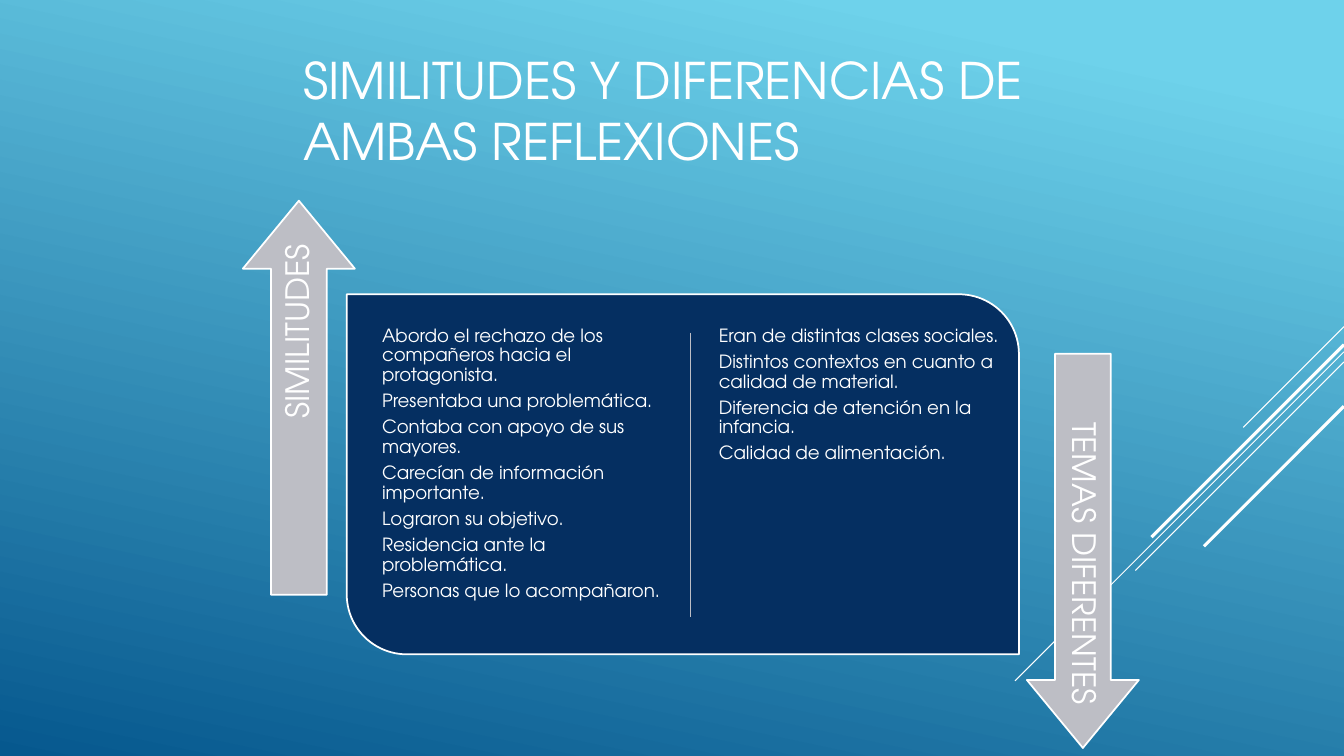
from dataclasses import dataclass

from lxml import etree
from pptx import Presentation
from pptx.dml.color import RGBColor
from pptx.enum.shapes import MSO_CONNECTOR, MSO_SHAPE
from pptx.enum.text import MSO_ANCHOR, PP_ALIGN
from pptx.oxml.ns import qn
from pptx.util import Pt

STRAIGHT = MSO_CONNECTOR.STRAIGHT
PANEL_SHAPE = MSO_SHAPE.ROUND_2_DIAG_RECTANGLE
ARROW_SHAPE = MSO_SHAPE.RIGHT_ARROW
TOP, MIDDLE, BOTTOM = MSO_ANCHOR.TOP, MSO_ANCHOR.MIDDLE, MSO_ANCHOR.BOTTOM
LEFT, RIGHT = PP_ALIGN.LEFT, PP_ALIGN.RIGHT


@dataclass(frozen=True)
class Theme:
    font: str = "TeX Gyre Adventor"
    white: RGBColor = RGBColor(0xFF, 0xFF, 0xFF)
    navy: RGBColor = RGBColor(0x05, 0x2F, 0x61)
    gray: RGBColor = RGBColor(0xBD, 0xBE, 0xC5)
    sky: RGBColor = RGBColor(0x6E, 0xD2, 0xEB)
    deep_blue: RGBColor = RGBColor(0x06, 0x58, 0x8E)
    title_size: float = 36
    label_size: float = 23
    body_size: float = 13
    outline: float = 1.25


THEME = Theme()
PAGE_WIDTH, PAGE_HEIGHT = 960, 540

TITLE = "SIMILITUDES Y DIFERENCIAS DE AMBAS REFLEXIONES"
SIMILARITIES = [
    "Abordo el rechazo de los compañeros hacia el protagonista.",
    "Presentaba una problemática.",
    "Contaba con apoyo de sus mayores.",
    "Carecían de información importante.",
    "Lograron su objetivo.",
    "Residencia ante la problemática.",
    "Personas que lo acompañaron.",
]
DIFFERENCES = [
    "Eran de distintas clases sociales.",
    "Distintos contextos en cuanto a calidad de material.",
    "Diferencia de atención en la infancia.",
    "Calidad de alimentación.",
]
# Start height on the right edge, horizontal run, line width
DIAGONALS = [
    (233.3, 72, 0.75),
    (251.3, 235, 0.75),
    (258.5, 149, 0.75),
    (246.2, 137.5, 2.25),
    (290.2, 100, 2.25),
]


def apply_format(target, values):
    for name, value in values.items():
        setattr(target, name, value)


def centered_box(center_x, center_y, width, height):
    return center_x - width / 2, center_y - height / 2, width, height


def add_line(page, start, end, color, width):
    line = page.shapes.add_connector(STRAIGHT, *map(Pt, (*start, *end)))
    line.line.color.rgb = color
    line.line.width = Pt(width)
    etree.SubElement(line._element.spPr, qn("a:effectLst"))


def add_outlined_shape(page, kind, box, fill, adjustments):
    shape = page.shapes.add_shape(kind, *map(Pt, box))
    shape.shadow.inherit = False
    shape.fill.solid()
    shape.fill.fore_color.rgb = fill
    shape.line.color.rgb = THEME.white
    shape.line.width = Pt(THEME.outline)
    for index, value in enumerate(adjustments):
        shape.adjustments[index] = value
    return shape


def add_text(page, box, texts, size, insets, anchor=TOP, align=LEFT, spacing=0.9, after=0.35):
    """Insets are horizontal and vertical; after is a share of the type size."""
    text_box = page.shapes.add_textbox(*map(Pt, box))
    frame = text_box.text_frame
    side, edge = map(Pt, insets)
    apply_format(frame, {
        "word_wrap": True, "vertical_anchor": anchor,
        "margin_left": side, "margin_right": side,
        "margin_top": edge, "margin_bottom": edge,
    })
    for index, text in enumerate(texts):
        para = frame.paragraphs[0] if index == 0 else frame.add_paragraph()
        apply_format(para, {"alignment": align, "line_spacing": spacing,
                            "space_after": Pt(size * after)})
        span = para.add_run()
        span.text = text
        apply_format(span.font, {"name": THEME.font, "size": Pt(size)})
        span.font.color.rgb = THEME.white
    return text_box


def paint_background(page):
    fill = page.background.fill
    fill.gradient()
    fill.gradient_angle = 258
    stops = ((0.1, THEME.sky), (1, THEME.deep_blue))
    for stop, (position, color) in zip(fill.gradient_stops, stops):
        stop.position = position
        stop.color.rgb = color


def add_diagonals(page, right):
    for top, run, width in DIAGONALS:
        add_line(page, (right, top), (right - run, top + run), THEME.white, width)


def add_panel(page, box):
    left, top, width, height = box
    add_outlined_shape(page, PANEL_SHAPE, box, THEME.navy, (0.1667, 0)[::-1])
    middle = left + width / 2 + 5.4
    add_line(page, (middle, top + 27.4), (middle, top + height - 26.6),
             THEME.gray, THEME.outline)
    for column, texts in enumerate((SIMILARITIES, DIFFERENCES)):
        column_box = (left + 21.6 + column * 240.5, top + 19.5, 208.1, 218.9)
        add_text(page, column_box, texts, THEME.body_size, (3.6, 3.6))


def add_labelled_arrow(page, center, label, rotation):
    """Draw a vertical arrow whose label sits slightly towards its tail."""
    center_x, center_y = center
    tail_shift = 12.2 if rotation == 270 else -12.2
    arrow = add_outlined_shape(page, ARROW_SHAPE, centered_box(*center, 281.5, 80),
                               THEME.gray, (0.498, 0.607))
    text_box = add_text(page, centered_box(center_x, center_y + tail_shift, 257.8, 39.6),
                        [label], THEME.label_size, (7.2, 7.2), MIDDLE, RIGHT)
    arrow.rotation = text_box.rotation = rotation


def build_comparison(page):
    paint_background(page)
    add_diagonals(page, PAGE_WIDTH)
    add_text(page, (209.5, 31, 586, 94.3), [TITLE], THEME.title_size, (7.2, 3.6),
             BOTTOM, spacing=1.0, after=0)
    add_panel(page, (247.7, 210.2, 480.2, 257.2))
    add_labelled_arrow(page, (213.5, 284.1), "SIMILITUDES", 270)
    add_labelled_arrow(page, (773.5, 393.5), "TEMAS DIFERENTES", 90)


def main():
    deck = Presentation()
    deck.slide_width, deck.slide_height = Pt(PAGE_WIDTH), Pt(PAGE_HEIGHT)
    build_comparison(deck.slides.add_slide(deck.slide_layouts[6]))
    deck.save("out.pptx")


if __name__ == "__main__":
    main()
